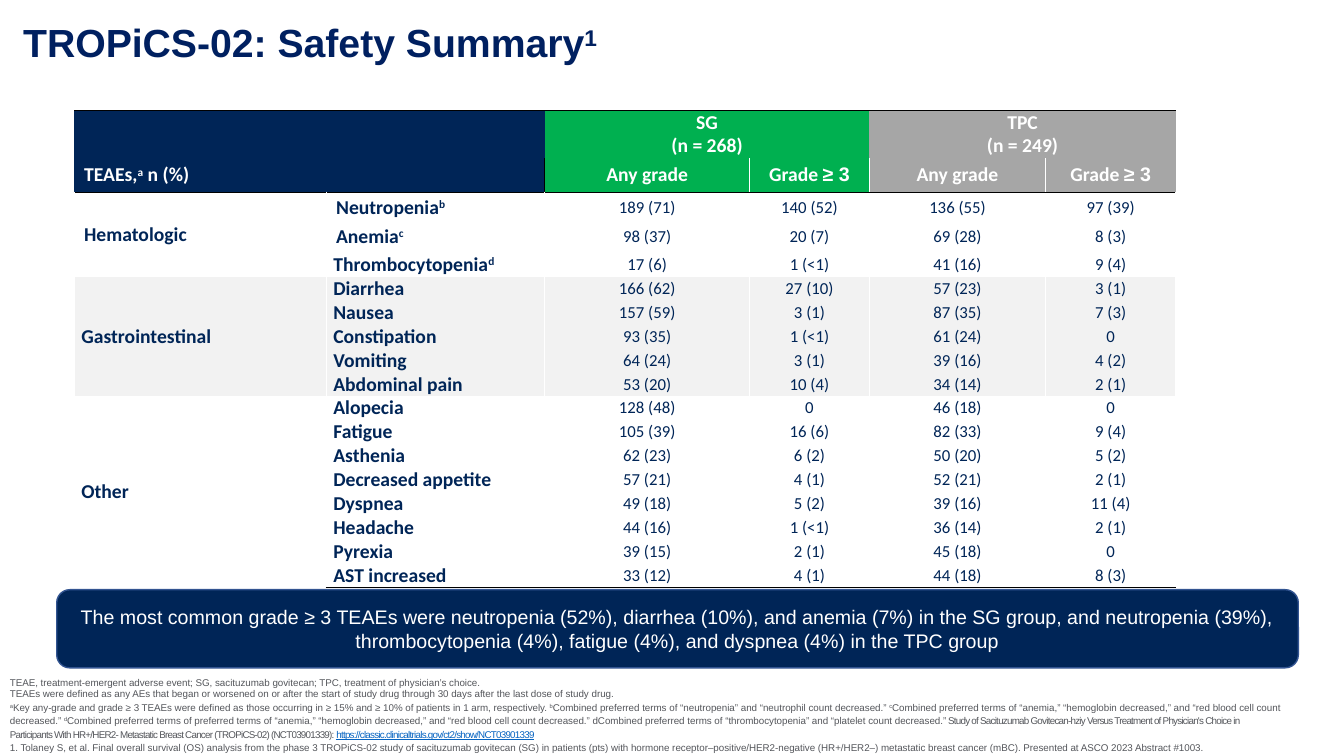
"""Build the TROPiCS-02 safety summary slide."""
from lxml.etree import SubElement
from pptx import Presentation
from pptx.dml.color import RGBColor as Rgb
from pptx.enum.shapes import MSO_SHAPE as Form
from pptx.enum.text import MSO_ANCHOR as Anchor, MSO_AUTO_SIZE as Fit, PP_ALIGN as Align
from pptx.oxml.ns import qn
from pptx.util import Cm, Pt

HUE = dict(navy="002557", title="002060", green="00B050", gray="A6A6A6", band="F2F2F2",
           white="FFFFFF", black="000000", edge="325491", note="54565B", link="0563C1")

TITLE = "TROPiCS-02: Safety Summary^1^"
STUB = "TEAEs,^a^ n (%)"
ARMS = [("SG\n(n = 268)", "green"), ("TPC\n(n = 249)", "gray")]
GRADES = [("Any grade", ""), ("Grade ", "≥ 3")]
GROUPS = [
    ("Hematologic", "white", [
        ("Neutropenia^b^", "189 (71)", "140 (52)", "136 (55)", "97 (39)"),
        ("Anemia^c^", "98 (37)", "20 (7)", "69 (28)", "8 (3)"),
        ("Thrombocytopenia^d^", "17 (6)", "1 (<1)", "41 (16)", "9 (4)")]),
    ("Gastrointestinal", "band", [
        ("Diarrhea", "166 (62)", "27 (10)", "57 (23)", "3 (1)"),
        ("Nausea", "157 (59)", "3 (1)", "87 (35)", "7 (3)"),
        ("Constipation", "93 (35)", "1 (<1)", "61 (24)", "0"),
        ("Vomiting", "64 (24)", "3 (1)", "39 (16)", "4 (2)"),
        ("Abdominal pain", "53 (20)", "10 (4)", "34 (14)", "2 (1)")]),
    ("Other", "white", [
        ("Alopecia", "128 (48)", "0", "46 (18)", "0"),
        ("Fatigue", "105 (39)", "16 (6)", "82 (33)", "9 (4)"),
        ("Asthenia", "62 (23)", "6 (2)", "50 (20)", "5 (2)"),
        ("Decreased appetite", "57 (21)", "4 (1)", "52 (21)", "2 (1)"),
        ("Dyspnea", "49 (18)", "5 (2)", "39 (16)", "11 (4)"),
        ("Headache", "44 (16)", "1 (<1)", "36 (14)", "2 (1)"),
        ("Pyrexia", "39 (15)", "2 (1)", "45 (18)", "0"),
        ("AST increased", "33 (12)", "4 (1)", "44 (18)", "8 (3)")]),
]
CLAIM = ("The most common grade ≥ 3 TEAEs were neutropenia (52%), diarrhea (10%), and anemia (7%) "
         "in the SG group, and neutropenia (39%), thrombocytopenia (4%), fatigue (4%), "
         "and dyspnea (4%) in the TPC group")
NOTES = [
    "TEAE, treatment-emergent adverse event; SG, sacituzumab govitecan; "
    "TPC, treatment of physician’s choice.",
    "TEAEs were defined as any AEs that began or worsened on or after the start of study drug "
    "through 30 days after the last dose of study drug.",
    "^a^Key any-grade and grade ≥ 3 TEAEs were defined as those occurring in ≥ 15% and ≥ 10% of "
    "patients in 1 arm, respectively. ^b^Combined preferred terms of “neutropenia” and “neutrophil "
    "count decreased.” ^c^Combined preferred terms of “anemia,” “hemoglobin decreased,” and “red "
    "blood cell count decreased.” ^d^Combined preferred terms of preferred terms of “anemia,” "
    "“hemoglobin decreased,” and “red blood cell count decreased.” dCombined preferred terms of "
    "“thrombocytopenia” and “platelet count decreased.”",
]
STUDY = (" Study of Sacituzumab Govitecan-hziy Versus Treatment of Physician's Choice in Participants "
         "With HR+/HER2- Metastatic Breast Cancer (TROPiCS-02) (NCT03901339): ")
URL = "https://classic.clinicaltrials.gov/ct2/show/NCT03901339"
CITE = ("\n1. Tolaney S, et al. Final overall survival (OS) analysis from the phase 3 TROPiCS-02 study "
        "of sacituzumab govitecan (SG) in patients (pts) with hormone receptor–positive/HER2-negative "
        "(HR+/HER2–) metastatic breast cancer (mBC). Presented at ASCO 2023 Abstract #1003.")

WIDE = [6.35, 5.51, 5.16, 3.02, 4.44, 3.28]
HIGH = [1.2, 0.86, 0.76, 0.74, 0.63] + [0.6] * 13


def put(par, text, size, hue, bold=False, face="Arial", line=False, gap=0):
    """Add runs; ^x^ is raised and a newline breaks the line."""
    for i, part in enumerate(text.split("^")):
        for j, piece in enumerate(part.split("\n")):
            if j:
                par.add_line_break()
            if not piece:
                continue
            run = par.add_run()
            run.text = piece
            font = run.font
            font.size, font.bold, font.name = Pt(size), bold, face
            font.color.rgb = Rgb.from_string(HUE[hue])
            if line:
                font.underline = True
            props = run._r.get_or_add_rPr()
            if i % 2:
                props.set("baseline", "30000")
            if gap:
                props.set("spc", str(gap))


def dress(cell, hue, sides):
    """Give a cell its borders and fill."""
    props = cell._tc.get_or_add_tcPr()
    for side in "LRTB":
        rule = SubElement(props, qn("a:ln" + side))
        if side in sides:
            rule.set("w", str(Pt(1)))
            fill = SubElement(rule, qn("a:solidFill"))
            SubElement(fill, qn("a:srgbClr")).set("val", HUE[sides[side]])
        else:
            rule.set("w", "0")
            SubElement(rule, qn("a:noFill"))
    cell.fill.solid()
    cell.fill.fore_color.rgb = Rgb.from_string(HUE[hue])


def pad(cell, side=0.18, edge=0, anchor=Anchor.MIDDLE):
    """Set cell margins and anchor, and return its paragraph."""
    cell.margin_left = cell.margin_right = Cm(side)
    cell.margin_top = cell.margin_bottom = Cm(edge)
    cell.vertical_anchor = anchor
    return cell.text_frame.paragraphs[0]


def head(grid):
    """Fill the two header rows."""
    for r in range(2):
        for c in range(2):
            sides = {"T": "black"} if r == 0 else {"B": "black"}
            if c:
                sides["R"] = "black"
            dress(grid.cell(r, c), "navy", sides)
    stub = grid.cell(0, 0)
    stub.merge(grid.cell(1, 1))
    put(pad(stub, 0.25, 0.13, Anchor.BOTTOM), STUB, 14, "white", True, "Calibri")
    for a, (arm, hue) in enumerate(ARMS):
        left = 2 + 2 * a
        for g, (word, sign) in enumerate(GRADES):
            col = left + g
            edge = {"L": "white" if col > 2 else "black"}
            dress(grid.cell(0, col), hue, {"T": "black"})
            dress(grid.cell(1, col), hue, {"B": "black", **edge})
            par = pad(grid.cell(1, col))
            par.alignment = Align.CENTER
            put(par, word, 14, "white", True, "Calibri")
            put(par, sign, 14, "white", True)
        top = grid.cell(0, left)
        top.merge(grid.cell(0, left + 1))
        par = pad(top)
        par.alignment = Align.CENTER
        put(par, arm, 14, "white", True, "Calibri")


def body(grid):
    """Fill the event rows, group by group."""
    row, last = 2, len(HIGH) - 1
    for name, hue, rows in GROUPS:
        first = row
        for vals in rows:
            sides = {"L": "white", "R": "white"}
            if row == 2:
                sides["T"] = "black"
            if row == last:
                sides["B"] = "black"
            for col in range(len(WIDE)):
                dress(grid.cell(row, col), hue, sides)
            side = 0.25 if row < 4 else 0.18
            put(pad(grid.cell(row, 1), side), vals[0], 14, "navy", True, "Calibri")
            for col, val in enumerate(vals[1:], 2):
                par = pad(grid.cell(row, col))
                par.alignment = Align.CENTER
                put(par, val, 12, "navy", False, "Calibri")
            row += 1
        cell = grid.cell(first, 0)
        cell.merge(grid.cell(row - 1, 0))
        put(pad(cell, 0.25 if first == 2 else 0.18), name, 14, "navy", True, "Calibri")


def main():
    """Lay out the slide and save it."""
    deck = Presentation()
    deck.slide_width, deck.slide_height = Cm(33.87), Cm(19.05)
    slide = deck.slides.add_slide(deck.slide_layouts[5])
    shapes = slide.shapes

    title = shapes.title
    title.left, title.top, title.width, title.height = Cm(0.33), Cm(-0.13), Cm(31.9), Cm(2.54)
    frame = title.text_frame
    frame.auto_size, frame.vertical_anchor = Fit.NONE, Anchor.MIDDLE
    par = frame.paragraphs[0]
    par.alignment, par.line_spacing = Align.LEFT, 0.9
    put(par, TITLE, 28, "title", True)

    grid = shapes.add_table(len(HIGH), len(WIDE), Cm(1.87), Cm(2.78),
                            Cm(sum(WIDE)), Cm(sum(HIGH))).table
    grid.first_row = grid.horz_banding = False
    grid._tbl.tblPr.find(qn("a:tableStyleId")).text = "{2D5ABB26-0587-4C30-8999-92F81FD0307C}"
    for col, size in zip(grid.columns, WIDE):
        col.width = Cm(size)
    for row, size in zip(grid.rows, HIGH):
        row.height = Cm(size)
    head(grid)
    body(grid)

    claim = shapes.add_shape(Form.ROUNDED_RECTANGLE, Cm(1.43), Cm(14.86), Cm(31.29), Cm(1.97))
    claim.shadow.inherit = False
    claim.fill.solid()
    claim.fill.fore_color.rgb = Rgb.from_string(HUE["navy"])
    claim.line.color.rgb = Rgb.from_string(HUE["edge"])
    claim.line.width = Pt(1)
    frame = claim.text_frame
    frame.word_wrap, frame.vertical_anchor = True, Anchor.MIDDLE
    par = frame.paragraphs[0]
    par.alignment, par.space_after = Align.CENTER, Pt(6)
    put(par, CLAIM, 14, "white")

    frame = shapes.add_textbox(0, Cm(16.92), Cm(32.56), Cm(1.96)).text_frame
    frame.word_wrap = True
    for i, note in enumerate(NOTES):
        par = frame.add_paragraph() if i else frame.paragraphs[0]
        put(par, note, 7, "note")
    par.line_spacing, par.space_after = 1.14, Pt(6)
    put(par, STUDY, 7, "note", gap=-50)
    put(par, URL, 7, "link", line=True, gap=-50)
    put(par, CITE, 7, "note")

    deck.save("out.pptx")


if __name__ == "__main__":
    main()
